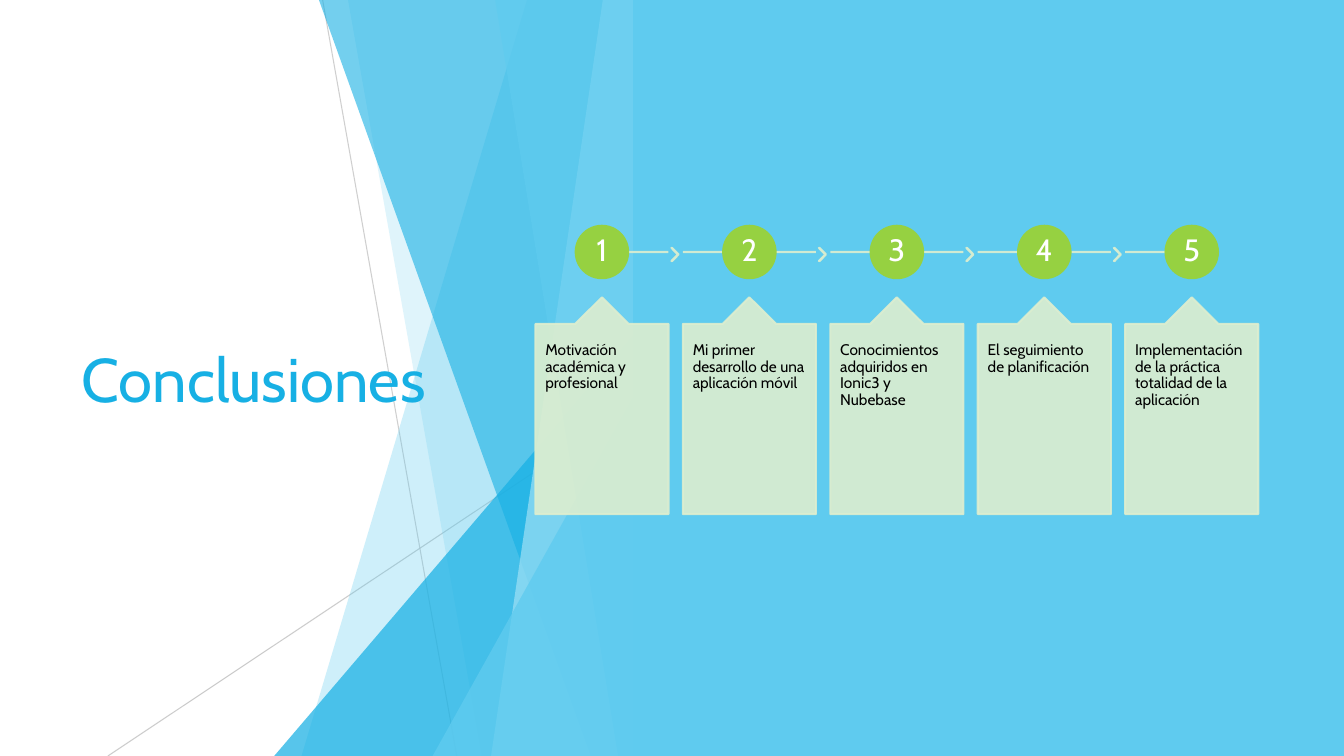
"""Build the conclusions slide: a faceted blue backdrop and five numbered cards."""
from lxml import etree
from pptx import Presentation
from pptx import util as u
from pptx.dml.color import RGBColor
from pptx.enum import shapes, text
from pptx.oxml.ns import qn

SKY = RGBColor(0x5F, 0xCB, 0xEF)
BLUE = RGBColor(0x17, 0xB0, 0xE4)
PALE_BLUE = RGBColor(0x9F, 0xE0, 0xF5)
GREY = RGBColor(0xBF, 0xBF, 0xBF)
GREEN = RGBColor(0x96, 0xD1, 0x41)
PALE_GREEN = RGBColor(0xDD, 0xEE, 0xCF)
WHITE = RGBColor(0xFF, 0xFF, 0xFF)
BLACK = RGBColor(0x00, 0x00, 0x00)

CONCLUSIONS = [
    "Motivación académica y profesional",
    "Mi primer desarrollo de una aplicación móvil",
    "Conocimientos adquiridos en Ionic3 y Nubebase",
    "El seguimiento de planificación",
    "Implementación de la práctica totalidad de la aplicación",
]
PANEL_LEFT = 6.28
SLIDE_WIDTH, SLIDE_HEIGHT = 13.33, 7.5
CARD_LEFT, CARD_WIDTH, CARD_STEP = 5.31, 1.32, 5.85 / 4
BADGE_SIZE, TRACK_Y = 0.52, 2.5


class SlideBuilder:
    font = "Cabin"

    def __init__(self, deck):
        self.page = deck.slides.add_slide(deck.slide_layouts[5])
        self.shapes = self.page.shapes

    def set_alpha(self, format_, percent):
        if percent < 100:
            color = format_._xPr.find(".//" + qn("a:srgbClr"))
            etree.SubElement(color, qn("a:alpha"), val=str(percent * 1000))

    def paint(self, shape, color, alpha=100, outlined=False):
        shape.shadow.inherit = False
        shape.fill.solid()
        shape.fill.fore_color.rgb = color
        self.set_alpha(shape.fill, alpha)
        if outlined:
            self.stroke(shape.line, color, 1.5, alpha)
        else:
            shape.line.fill.background()

    def stroke(self, line, color, width, alpha):
        line.width = u.Pt(width)
        line.color.rgb = color
        self.set_alpha(line.fill, alpha)

    def shape(self, kind, left, top, width, height, color, alpha=100,
              adjustments=(), outlined=False):
        shape = self.shapes.add_shape(kind, *map(u.Inches, (left, top, width, height)))
        for index, value in enumerate(adjustments):
            shape.adjustments[index] = value
        self.paint(shape, color, alpha, outlined)
        return shape

    def facet(self, top_x, bottom_x, color, alpha):
        corners = [(PANEL_LEFT, -0.01), (PANEL_LEFT, SLIDE_HEIGHT), (bottom_x, SLIDE_HEIGHT)]
        builder = self.shapes.build_freeform(u.Inches(top_x), u.Inches(-0.01))
        builder.add_line_segments([(u.Inches(x), u.Inches(y)) for x, y in corners])
        self.paint(builder.convert_to_shape(), color, alpha)

    def wedge(self, left, top, color, alpha):
        self.shape(shapes.MSO_SHAPE.ISOSCELES_TRIANGLE, left, top, PANEL_LEFT - left,
                   SLIDE_HEIGHT - top, color, alpha, [1])

    def line(self, start, end, color, width, alpha):
        connector = self.shapes.add_connector(
            shapes.MSO_CONNECTOR.STRAIGHT, *map(u.Inches, (*start, *end)))
        self.stroke(connector.line, color, width, alpha)
        etree.SubElement(connector._element.spPr, qn("a:effectLst"))

    def label(self, box, words, size, color, insets, anchor, align, spacing=None):
        frame = box.text_frame
        frame.word_wrap = True
        frame.auto_size = text.MSO_AUTO_SIZE.NONE
        frame.vertical_anchor = anchor
        frame.margin_left = frame.margin_right = u.Inches(insets[0])
        frame.margin_top = frame.margin_bottom = u.Inches(insets[1])
        para = frame.paragraphs[0]
        para.alignment = align
        para.line_spacing = spacing
        span = para.add_run()
        span.text = words
        span.font.name = self.font
        span.font.size = u.Pt(size)
        span.font.color.rgb = color

    def title(self, words, left, top, width, height):
        box = self.shapes.title
        box.left, box.top, box.width, box.height = map(u.Inches, (left, top, width, height))
        self.shapes._spTree.append(box._element)
        self.label(box, words, 44, BLUE, (0.1, 0.05),
                   text.MSO_ANCHOR.MIDDLE, text.PP_ALIGN.LEFT)

    def track(self, left, is_first, is_last):
        centre = left + CARD_WIDTH / 2
        start = centre if is_first else left
        end = centre if is_last else left + CARD_WIDTH
        self.line((start, TRACK_Y), (end, TRACK_Y), PALE_GREEN, 1.5, 90)
        if not is_last:
            self.shape(shapes.MSO_SHAPE.CHEVRON, left + 1.35, 2.46, 0.07, 0.13,
                       PALE_GREEN, 90, [0.9], outlined=True)

    def badge(self, left, number):
        badge = self.shape(shapes.MSO_SHAPE.OVAL, left + (CARD_WIDTH - BADGE_SIZE) / 2,
                           TRACK_Y - BADGE_SIZE / 2, BADGE_SIZE, BADGE_SIZE,
                           GREEN, outlined=True)
        self.label(badge, str(number), 22, WHITE, (0.02, 0.02),
                   text.MSO_ANCHOR.MIDDLE, text.PP_ALIGN.CENTER, 0.9)

    def card(self, left, words):
        card = self.shape(shapes.MSO_SHAPE.UP_ARROW_CALLOUT, left, 2.95, CARD_WIDTH, 2.15,
                          PALE_GREEN, 90, [0.5, 0.2, 0.2, 1], outlined=True)
        self.label(card, words, 11, BLACK, (0.1, 0.18),
                   text.MSO_ANCHOR.TOP, text.PP_ALIGN.LEFT, 0.9)


def main():
    deck = Presentation()
    deck.slide_width, deck.slide_height = u.Inches(SLIDE_WIDTH), u.Inches(SLIDE_HEIGHT)
    slide = SlideBuilder(deck)

    slide.line((3.2, 0), (4.53, SLIDE_HEIGHT), GREY, 0.75, 75)
    slide.line((PANEL_LEFT, 4.03), (1.07, SLIDE_HEIGHT), GREY, 0.75, 80)
    slide.facet(5.23, 2.99, SKY, 30)
    slide.facet(3.45, 4.78, SKY, 20)
    slide.wedge(2.72, 3.33, BLUE, 72)
    slide.facet(3.16, 5.86, BLUE, 60)
    slide.facet(5.98, 4.87, PALE_BLUE, 70)
    slide.facet(4.91, 6.13, SKY, 65)
    slide.wedge(4.29, 3.93, SKY, 80)
    slide.shape(shapes.MSO_SHAPE.RECTANGLE, PANEL_LEFT, 0,
                SLIDE_WIDTH - PANEL_LEFT, SLIDE_HEIGHT, SKY)
    slide.title("Conclusiones", 0.71, 1.51, 3.88, 4.48)

    for index, words in enumerate(CONCLUSIONS):
        left = CARD_LEFT + index * CARD_STEP
        slide.track(left, index == 0, index == len(CONCLUSIONS) - 1)
        slide.badge(left, index + 1)
        slide.card(left, words)

    deck.save("out.pptx")


if __name__ == "__main__":
    main()
